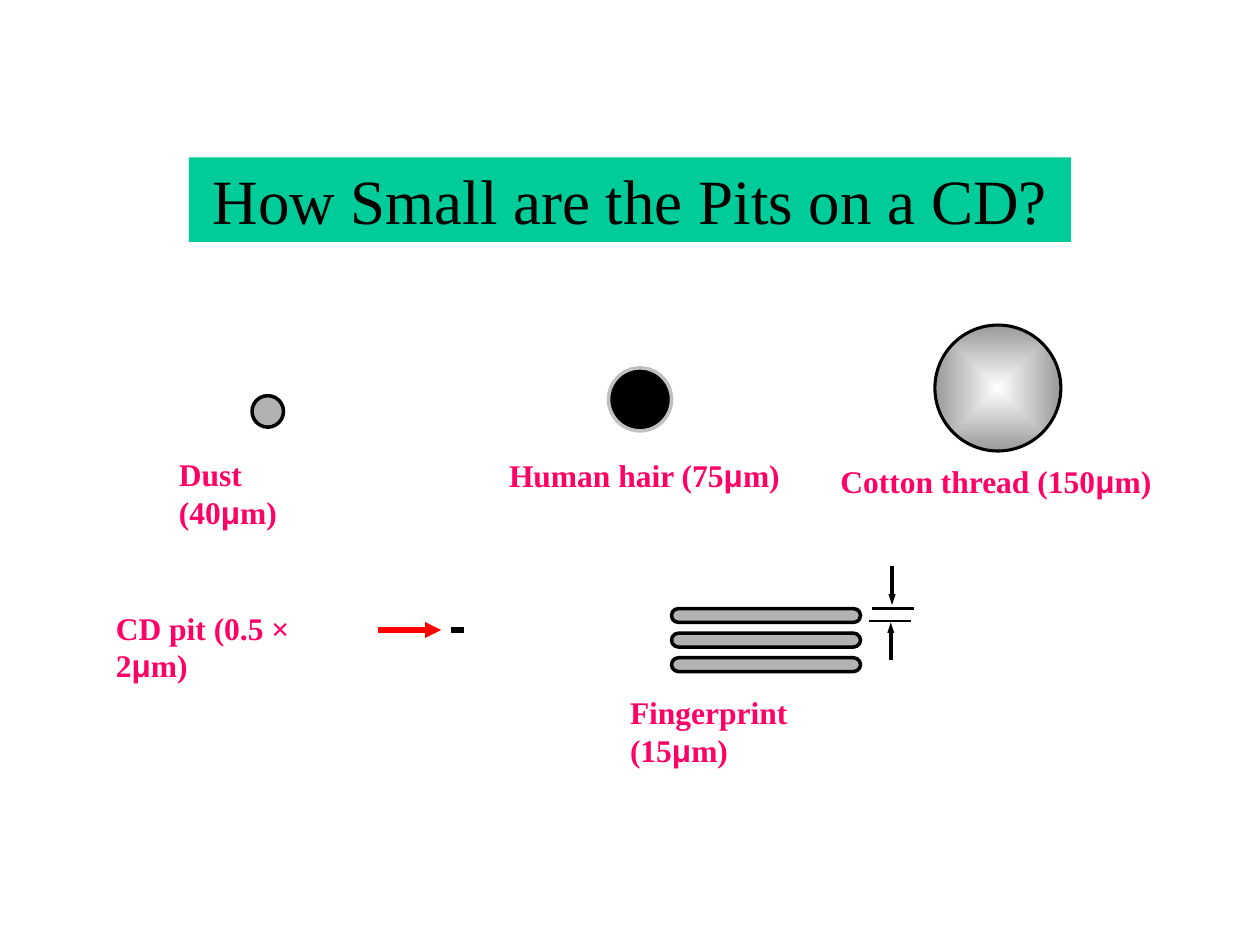
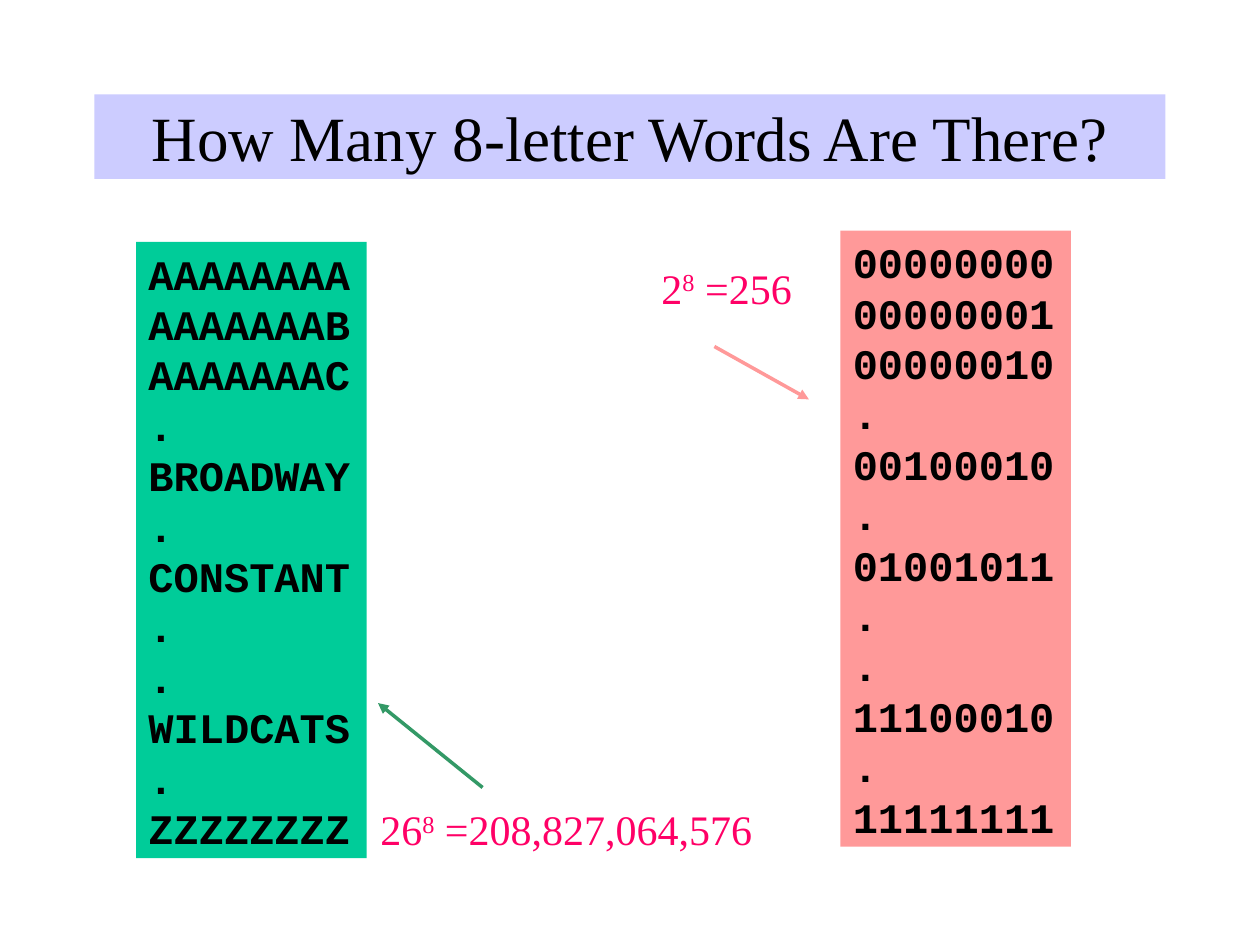
"""Build two slides on the size of CD pits and the number of 8-letter words."""
from dataclasses import dataclass

from lxml import etree
from pptx import Presentation
from pptx.dml.color import RGBColor
from pptx.enum.shapes import MSO_CONNECTOR, MSO_SHAPE
from pptx.enum.text import MSO_ANCHOR, PP_ALIGN
from pptx.oxml.ns import qn
from pptx.util import Inches, Pt

RECTANGLE = MSO_SHAPE.RECTANGLE
OVAL = MSO_SHAPE.OVAL
ROUNDED = MSO_SHAPE.ROUNDED_RECTANGLE
STRAIGHT = MSO_CONNECTOR.STRAIGHT
MIDDLE, TOP = MSO_ANCHOR.MIDDLE, MSO_ANCHOR.TOP
CENTER, LEFT = PP_ALIGN.CENTER, PP_ALIGN.LEFT


@dataclass(frozen=True)
class Theme:
    """Colours, fonts and type sizes shared by the slides."""
    black: str = "000000"
    white: str = "FFFFFF"
    grey: str = "B2B2B2"
    silver: str = "C0C0C0"
    shade: str = "999999"
    pink: str = "FF0066"
    red: str = "FF0000"
    teal: str = "00CC99"
    lilac: str = "CCCCFF"
    salmon: str = "FF9999"
    green: str = "339966"
    serif: str = "Times New Roman"
    sans: str = "Arial"
    mono: str = "Courier New"
    title_size: int = 36
    large_size: int = 24
    label_size: int = 18


THEME = Theme()
TITLE = {"name": THEME.serif, "size": Pt(THEME.title_size), "color": THEME.black}
WORD = {"name": THEME.mono, "size": Pt(THEME.large_size), "color": THEME.black, "bold": True}
LABEL = {"name": THEME.serif, "size": Pt(THEME.label_size), "color": THEME.pink, "bold": True}
MICRO = LABEL | {"name": THEME.sans}
FORMULA = {"name": THEME.serif, "size": Pt(THEME.large_size), "color": THEME.pink}


def rgb(value):
    """Return a colour object for a hex value."""
    return RGBColor.from_string(value)


def add_span(para, text, style):
    """Add a run in the given style and return it."""
    span = para.add_run()
    span.text = text
    for name, value in style.items():
        if name == "color":
            span.font.color.rgb = rgb(value)
        else:
            setattr(span.font, name, value)
    return span


def set_frame(frame, anchor=TOP, inset=True):
    """Make a text frame wrap, and drop its margins when not inset."""
    frame.word_wrap = True
    frame.vertical_anchor = anchor
    if not inset:
        for side in ("left", "top", "right", "bottom"):
            setattr(frame, f"margin_{side}", 0)


def add_figure(page, kind, place, fill, line=None, width=2):
    """Add a preset shape with a plain fill and an optional outline."""
    shape = page.shapes.add_shape(kind, *map(Inches, place))
    shape.shadow.inherit = False
    shape.fill.solid()
    shape.fill.fore_color.rgb = rgb(fill)
    if line:
        shape.line.color.rgb = rgb(line)
        shape.line.width = Pt(width)
    else:
        shape.line.fill.background()
    return shape


def add_panel(page, place, fill, lines, style, anchor=TOP, align=LEFT):
    """Add a filled rectangle holding one paragraph per line."""
    frame = add_figure(page, RECTANGLE, place, fill).text_frame
    set_frame(frame, anchor)
    for index, text in enumerate(lines):
        para = frame.add_paragraph() if index else frame.paragraphs[0]
        para.alignment = align
        add_span(para, text, style)


def add_title(page, text, place, fill):
    """Add the title band."""
    add_panel(page, place, fill, [text], TITLE, MIDDLE, CENTER)


def add_box(page, place, inset):
    """Add a text box and return its first paragraph."""
    frame = page.shapes.add_textbox(*map(Inches, place)).text_frame
    set_frame(frame, inset=inset)
    return frame.paragraphs[0]


def add_label(page, name, left, top, width):
    """Add a size label, with the micro sign in its own font."""
    para = add_box(page, (left, top, width, 0.3), False)
    before, micro, after = name.partition("μ")
    for text, style in ((before, LABEL), (micro, MICRO), (after, LABEL)):
        add_span(para, text, style)


def add_formula(page, place, base, result, inset):
    """Add a power of eight with its result."""
    para = add_box(page, place, inset)
    add_span(para, base, FORMULA)
    power = add_span(para, "8", FORMULA)
    power._r.get_or_add_rPr().set("baseline", "30000")
    add_span(para, f" ={result}", FORMULA)


def add_line(page, start, end, color, width, head=None):
    """Add a straight line, with an arrowhead of the given width if any."""
    line = page.shapes.add_connector(STRAIGHT, *map(Inches, start + end))
    line.line.color.rgb = rgb(color)
    line.line.width = Pt(width)
    if head:
        outline = line.line._get_or_add_ln()
        etree.SubElement(outline, qn("a:tailEnd"), type="triangle", w=head, len="med")
    etree.SubElement(line._element.spPr, qn("a:effectLst"))


def shade_from_center(shape, inner, outer):
    """Fill a shape with a gradient that spreads from its centre."""
    shape.fill.gradient()
    for stop, color, position in zip(shape.fill.gradient_stops, (inner, outer), (0, 1)):
        stop.color.rgb = rgb(color)
        stop.position = position
    gradient = shape._element.spPr.find(qn("a:gradFill"))
    linear = gradient.find(qn("a:lin"))
    spread = etree.Element(qn("a:path"), {"path": "shape"})
    etree.SubElement(spread, qn("a:fillToRect"), dict.fromkeys("ltrb", "50000"))
    gradient.replace(linear, spread)


def add_fingerprint(page):
    """Add the ridges and the arrows that mark their thickness."""
    for row in range(3):
        ridge = add_figure(page, ROUNDED, (5.33, 4.83 + 0.195 * row, 1.5, 0.11),
                           THEME.grey, THEME.black)
        ridge.adjustments[0] = 0.5
    for left, top in ((6.92, 4.83), (6.9, 4.93)):
        add_line(page, (left, top), (left + 0.33, top), THEME.black, 1.5)
    for left, start, end in ((7.08, 4.49, 4.8), (7.07, 5.24, 4.94)):
        add_line(page, (left, start), (left, end), THEME.black, 2, "sm")


def build_pits(page):
    """Compare a CD pit with other small things."""
    add_title(page, "How Small are the Pits on a CD?", (1.5, 1.25, 7, 0.67), THEME.teal)
    thread = add_figure(page, OVAL, (7.42, 2.58, 1, 1), THEME.white, THEME.black, 1.75)
    shade_from_center(thread, THEME.white, THEME.shade)
    add_figure(page, OVAL, (4.83, 2.92, 0.5, 0.5), THEME.black, THEME.silver)
    add_figure(page, OVAL, (2, 3.14, 0.25, 0.25), THEME.grey, THEME.black)
    add_fingerprint(page)
    add_line(page, (3.58, 5), (3.68, 5), THEME.black, 3)
    add_line(page, (3, 5), (3.5, 5), THEME.red, 3, "med")
    for label in (
        ("Cotton thread (150μm)", 6.67, 3.67, 2.5),
        ("Human hair (75μm)", 4.04, 3.62, 2.17),
        ("Dust (40μm)", 1.42, 3.61, 1.33),
        ("Fingerprint (15μm)", 5, 5.5, 2.08),
        ("CD pit (0.5 × 2μm)", 0.92, 4.83, 2),
    ):
        add_label(page, *label)


def build_words(page):
    """Compare the counts of 8-letter words and 8-bit words."""
    add_title(page, "How Many 8-letter Words Are There?", (0.75, 0.75, 8.5, 0.67), THEME.lilac)
    letters = "AAAAAAAA AAAAAAAB AAAAAAAC . BROADWAY . CONSTANT . . WILDCATS . ZZZZZZZZ"
    bits = "00000000 00000001 00000010 . 00100010 . 01001011 . . 11100010 . 11111111"
    add_panel(page, (1.08, 1.92, 1.83, 4.89), THEME.teal, letters.split(), WORD)
    add_panel(page, (6.67, 1.83, 1.83, 4.89), THEME.salmon, bits.split(), WORD)
    add_formula(page, (5.25, 2.08, 1.17, 0.4), "2", "256", False)
    add_line(page, (5.67, 2.75), (6.42, 3.17), THEME.salmon, 2, "med")
    add_formula(page, (2.92, 6.33, 3.33, 0.5), "26", "208,827,064,576", True)
    add_line(page, (3.83, 6.25), (3, 5.58), THEME.green, 2, "med")


def main():
    """Build and save the deck."""
    deck = Presentation()
    deck.slide_width, deck.slide_height = Inches(10), Inches(7.5)
    blank = deck.slide_layouts[6]
    for build in (build_pits, build_words):
        build(deck.slides.add_slide(blank))
    deck.save("out.pptx")


if __name__ == "__main__":
    main()
